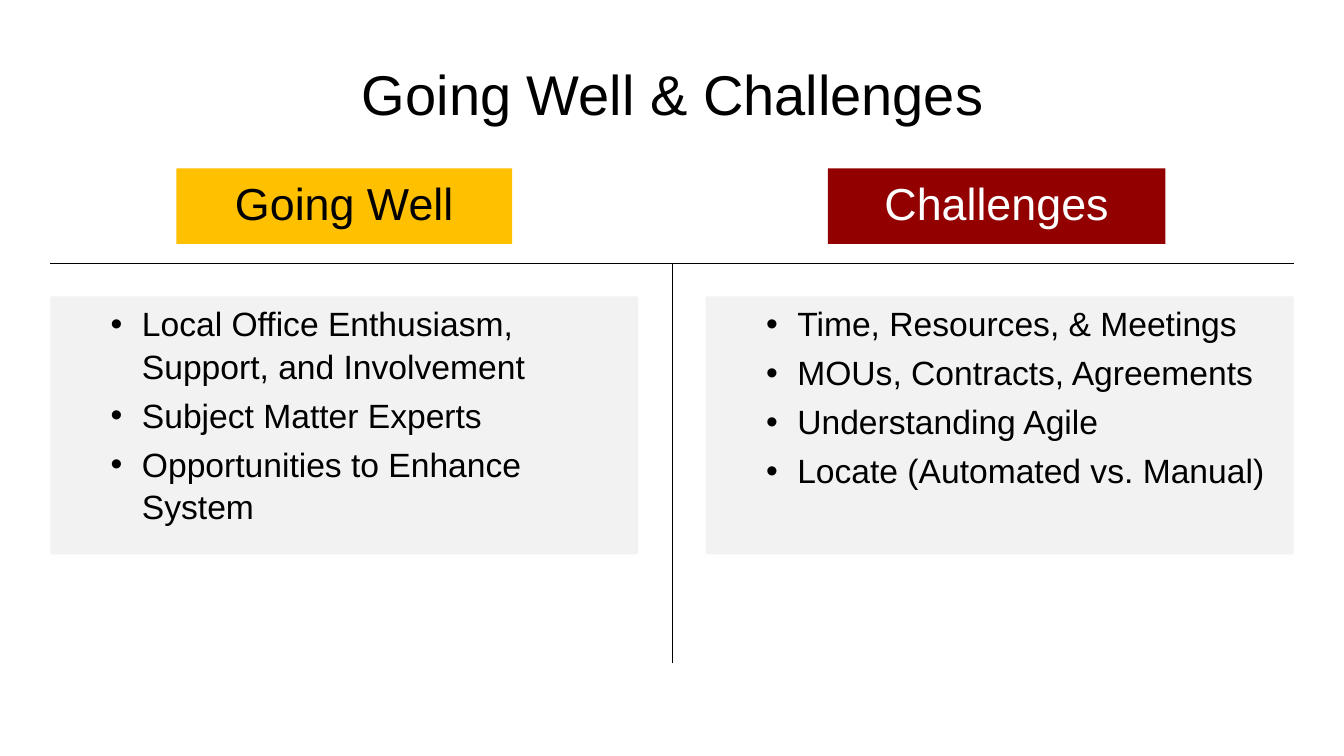
from dataclasses import dataclass

from lxml.etree import SubElement
from pptx import Presentation
from pptx.dml.color import RGBColor
from pptx.enum.shapes import MSO_CONNECTOR, MSO_SHAPE
from pptx.enum.text import MSO_ANCHOR, PP_ALIGN
from pptx.oxml.ns import qn
from pptx.shapes.autoshape import Shape
from pptx.slide import Slide
from pptx.text.text import Font
from pptx.util import Inches, Pt

BLACK = "000000"
WHITE = "FFFFFF"
PANEL_GRAY = "F2F2F2"
MARGIN = 0.5
RIGHT_EDGE = 12.83
DIVIDER_TOP = 2.61
DIVIDER_CENTER = 6.67


@dataclass
class Column:
    heading: str
    heading_left: float
    heading_width: float
    heading_fill: str
    heading_color: str
    panel_left: float
    points: list[str]


COLUMNS = [
    Column("Going Well", 1.75, 3.33, "FFC000", BLACK, MARGIN, [
        "Local Office Enthusiasm, Support, and Involvement",
        "Subject Matter Experts",
        "Opportunities to Enhance System",
    ]),
    Column("Challenges", 8.21, 3.35, "920000", WHITE, 7, [
        "Time, Resources, & Meetings",
        "MOUs, Contracts, Agreements",
        "Understanding Agile",
        "Locate (Automated vs. Manual)",
    ]),
]


def color(value: str) -> RGBColor:
    return RGBColor.from_string(value)


def format_font(font: Font, size: float, font_color: str) -> None:
    font.name = "Arial"
    font.size = Pt(size)
    font.color.rgb = color(font_color)


def add_title(slide: Slide, text: str) -> None:
    title = slide.shapes.title
    title.left, title.top = Inches(0.67), Inches(0.3)
    title.width, title.height = Inches(12), Inches(1.25)
    title.text_frame.text = text
    title.text_frame.vertical_anchor = MSO_ANCHOR.MIDDLE
    paragraph = title.text_frame.paragraphs[0]
    paragraph.alignment = PP_ALIGN.CENTER
    format_font(paragraph.runs[0].font, 40, BLACK)


def add_box(slide: Slide, left: float, top: float, width: float, height: float,
            fill: str) -> Shape:
    shape = slide.shapes.add_shape(
        MSO_SHAPE.RECTANGLE, Inches(left), Inches(top), Inches(width), Inches(height))
    shape.shadow.inherit = False
    shape.fill.solid()
    shape.fill.fore_color.rgb = color(fill)
    shape.line.fill.background()
    shape.text_frame.word_wrap = True
    shape.text_frame.vertical_anchor = MSO_ANCHOR.TOP
    return shape


def add_heading(slide: Slide, column: Column) -> None:
    shape = add_box(slide, column.heading_left, 1.67, column.heading_width, 0.75,
                    column.heading_fill)
    shape.text_frame.text = column.heading
    paragraph = shape.text_frame.paragraphs[0]
    paragraph.alignment = PP_ALIGN.CENTER
    paragraph.line_spacing = 1.05
    format_font(paragraph.runs[0].font, 32, column.heading_color)


def add_panel(slide: Slide, column: Column) -> None:
    shape = add_box(slide, column.panel_left, 2.94, 5.83, 2.56, PANEL_GRAY)
    shape.text_frame.text = "\n".join(column.points)
    for index, paragraph in enumerate(shape.text_frame.paragraphs):
        paragraph.alignment = PP_ALIGN.LEFT
        paragraph.level = 1
        paragraph.line_spacing = 1.05
        if index > 0:
            paragraph.space_before = Pt(4.8)
        properties = paragraph._p.get_or_add_pPr()
        properties.set("marL", str(Inches(0.81)))
        properties.set("indent", str(Inches(-0.31)))
        SubElement(properties, qn("a:buFont"), typeface="Arial")
        SubElement(properties, qn("a:buChar"), char="•")
        format_font(paragraph.runs[0].font, 24, BLACK)


def add_divider(slide: Slide, left: float, top: float, right: float, bottom: float) -> None:
    connector = slide.shapes.add_connector(
        MSO_CONNECTOR.STRAIGHT, Inches(left), Inches(top), Inches(right), Inches(bottom))
    connector.line.color.rgb = color(BLACK)
    connector.line.width = Pt(0.75)
    SubElement(connector._element.spPr, qn("a:effectLst"))


def main() -> None:
    presentation = Presentation()
    presentation.slide_width, presentation.slide_height = Inches(13.33), Inches(7.5)
    slide = presentation.slides.add_slide(presentation.slide_layouts.get_by_name("Title Only"))
    add_title(slide, "Going Well & Challenges")
    for column in COLUMNS:
        add_panel(slide, column)
        add_heading(slide, column)
    add_divider(slide, MARGIN, DIVIDER_TOP, RIGHT_EDGE, DIVIDER_TOP)
    add_divider(slide, DIVIDER_CENTER, DIVIDER_TOP, DIVIDER_CENTER, 6.58)
    presentation.save("out.pptx")


if __name__ == "__main__":
    main()
